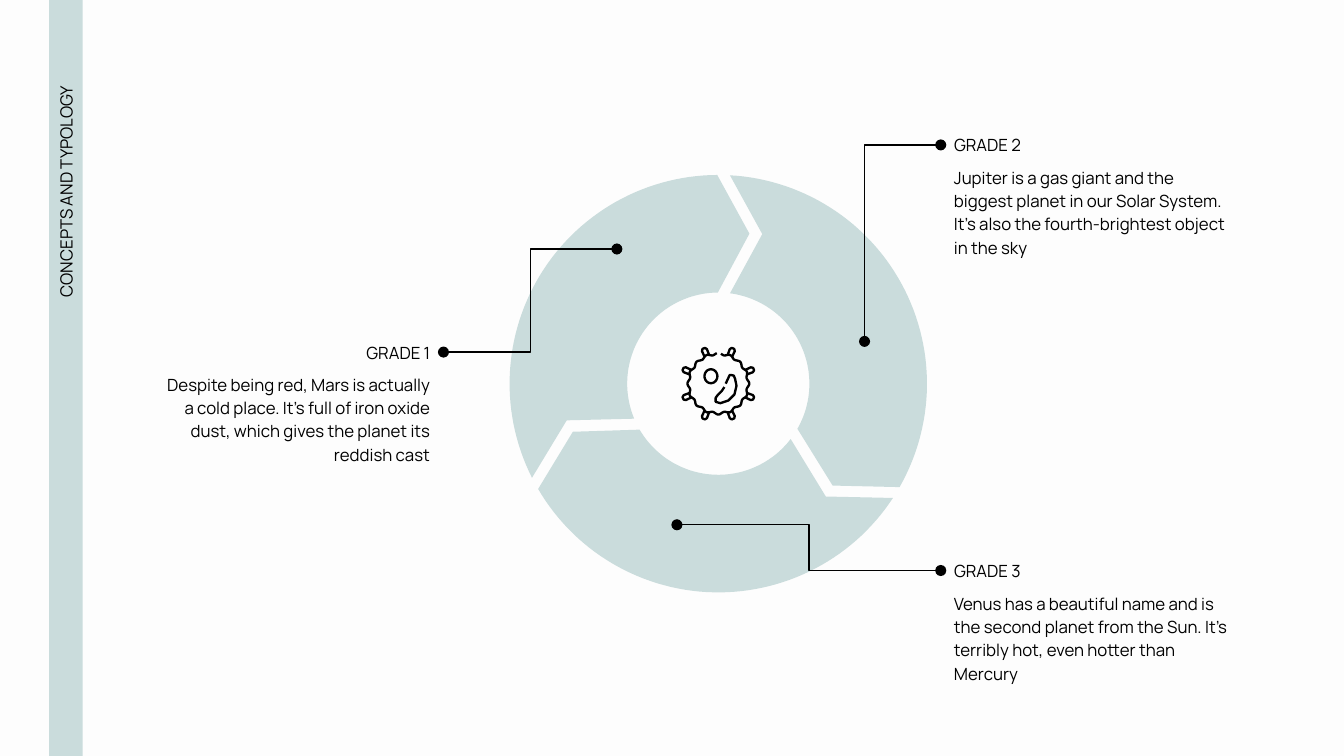
"""Build a slide with a three-part cycle, callouts and a vertical title."""
from dataclasses import dataclass
from math import cos, hypot, atan2, degrees, radians, sin

from lxml import etree
from pptx import Presentation
from pptx import util as u
from pptx.dml.color import RGBColor
from pptx.enum import shapes, text
from pptx.oxml.ns import qn

Point = tuple[float, float]

MIST = RGBColor(0xCA, 0xDC, 0xDC)
BLACK = RGBColor(0, 0, 0)
PAPER = RGBColor(0xFD, 0xFD, 0xFD)
FONT = "Manrope"
WIDTH = u.Inches(10)
HEIGHT = WIDTH * 9 // 16
COLUMNS = 100
CELL = WIDTH // COLUMNS
CENTRE = (53.45, 28.55)
OUTER, INNER = 15.53, 6.78
LEFT, RIGHT = text.PP_ALIGN.LEFT, text.PP_ALIGN.RIGHT


@dataclass(frozen=True)
class Block:
    """A block of text on the grid."""
    words: str
    col: float
    row: float
    cols: float
    rows: float
    align: text.PP_ALIGN = LEFT
    spacing: float = 1.0


@dataclass(frozen=True)
class Leader:
    """An elbow line between two grid points, with one or two corners."""
    start: Point
    end: Point
    single_corner: bool = False


TITLE = Block("CONCEPTS AND TYPOLOGY", -18.65, 27.8, 47.1, 2.3, RIGHT)
BLOCKS = [
    Block("GRADE 1", 11.1, 24.5, 21.9, 3.5, RIGHT),
    Block("Despite being red, Mars is actually a cold place. It’s full of iron oxide dust, "
          "which gives the planet its reddish cast", 10.67, 26.65, 22.3, 5.1, RIGHT, 1.15),
    Block("GRADE 2", 70, 9, 21.9, 3.5),
    Block("Jupiter is a gas giant and the biggest planet in our Solar System. It’s also "
          "the fourth-brightest object in the sky", 70, 11.25, 22.3, 5.1, LEFT, 1.15),
    Block("GRADE 3", 70, 40.7, 21.9, 3.5),
    Block("Venus has a beautiful name and is the second planet from the Sun. It’s "
          "terribly hot, even hotter than Mercury", 70, 42.95, 22.3, 5.1, LEFT, 1.15),
]
LEADERS = [
    Leader((45.9, 18.53), (33, 26.2)),
    Leader((64.33, 25.4), (70, 10.78), single_corner=True),
    Leader((50.37, 39.05), (70, 42.45)),
]
CRESCENT = [(54, 28.55), (54.25, 28), (54.3, 27.9), (54.4, 27.9), (54.6, 27.95),
            (54.7, 28.2), (54.8, 28.7), (54.65, 29.35), (54.2, 29.8), (53.6, 30),
            (53.25, 29.9), (53.25, 29.6), (53.4, 29.4), (53.7, 29.1), (53.9, 28.8)]


def cells(*counts: float) -> list[int]:
    """Turn grid counts into lengths."""
    return [round(n * CELL) for n in counts]


def polar(radius: float, angle: float) -> Point:
    """Place a point around the centre, clockwise from the top."""
    a = radians(angle)
    return CENTRE[0] + radius * sin(a), CENTRE[1] - radius * cos(a)


def arc(radius: float, first: float, last: float, steps: int = 60) -> list[Point]:
    """Sample an arc around the centre."""
    return [polar(radius, first + (last - first) * i / steps) for i in range(steps + 1)]


def outline(parent, points: list[Point], closed: bool = True):
    """Draw a freeform through grid points."""
    corners = [tuple(cells(*pt)) for pt in points]
    builder = parent.build_freeform(*corners[0], scale=1.0)
    builder.add_line_segments(corners[1:], close=closed)
    sp = builder.convert_to_shape()
    sp.shadow.inherit = False
    return sp


def paint(sp) -> None:
    """Fill a shape with the accent colour and drop its line."""
    sp.fill.solid()
    sp.fill.fore_color.rgb = MIST
    sp.line.fill.background()


def stroke(parent, points: list[Point], closed: bool = False) -> None:
    """Draw one unfilled black line of the icon."""
    sp = outline(parent, points, closed)
    sp.fill.background()
    sp.line.color.rgb = BLACK
    sp.line.width = u.Pt(1.25)
    etree.SubElement(sp.line._get_or_add_ln(), qn("a:round"))


def draw_cycle(parent) -> None:
    """Draw three equal chevron-ended ring segments."""
    for turn in (0, 120, 240):
        paint(outline(parent, [
            *arc(OUTER, turn + 3.2, turn + 119.7),
            polar(11.4, turn + 131.7),
            *arc(INNER, turn + 119.7, turn + 7.4),
            polar(11.6, turn + 16.4),
        ]))


def draw_microbe(parent) -> None:
    """Draw a wavy cell with eight knobs, a nucleus and a crescent."""
    stroke(parent, [polar(2.22 + 0.08 * cos(radians(16 * a)), a) for a in range(5, 358, 2)])
    knob = [(2.25, -0.18), (2.7, -0.2), (2.84, -0.1), (2.84, 0.1), (2.7, 0.2), (2.25, 0.18)]
    for k in range(8):
        stroke(parent, [polar(hypot(r, t), 22.5 + 45 * k + degrees(atan2(t, r)))
                        for r, t in knob])
    stroke(parent, [(52.9 + 0.48 * cos(radians(a)), 28 + 0.52 * sin(radians(a)))
                    for a in range(0, 360, 15)], closed=True)
    stroke(parent, CRESCENT)


def write(sp, block: Block, anchor=text.MSO_ANCHOR.TOP) -> None:
    """Put a block's words in a shape and format them."""
    sp.left, sp.top, sp.width, sp.height = cells(block.col, block.row, block.cols, block.rows)
    tf = sp.text_frame
    tf.text = block.words
    tf.word_wrap = True
    tf.auto_size = text.MSO_AUTO_SIZE.NONE
    tf.vertical_anchor = anchor
    tf.margin_left = tf.margin_right = tf.margin_top = tf.margin_bottom = CELL
    p = tf.paragraphs[0]
    p.alignment, p.line_spacing = block.align, block.spacing
    for r in p.runs:
        r.font.name, r.font.size, r.font.color.rgb = FONT, u.Pt(9), BLACK


def draw_leader(parent, leader: Leader) -> None:
    """Draw an elbow connector with a dot at each end."""
    (x1, y1), (x2, y2) = leader.start, leader.end
    if leader.single_corner:
        mid_x, mid_y = (x1 + x2) / 2, (y1 + y2) / 2
        half_w, half_h = abs(y2 - y1) / 2, abs(x2 - x1) / 2
        x1, y1, x2, y2 = mid_x - half_w, mid_y - half_h, mid_x + half_w, mid_y + half_h
    cxn = parent.add_connector(shapes.MSO_CONNECTOR.ELBOW, *cells(x1, y1, x2, y2))
    cxn.line.color.rgb = BLACK
    cxn.line.width = u.Pt(0.75)
    ln = cxn.line._get_or_add_ln()
    for end in ("a:headEnd", "a:tailEnd"):
        etree.SubElement(ln, qn(end), type="oval")
    props = cxn._element.spPr
    etree.SubElement(props, qn("a:effectLst"))
    if leader.single_corner:
        props.find(qn("a:xfrm")).set("rot", "16200000")
        props.find(qn("a:prstGeom")).set("prst", "bentConnector2")


def main() -> None:
    """Build and save the slide."""
    prs = Presentation()
    prs.slide_width, prs.slide_height = WIDTH, HEIGHT
    s = prs.slides.add_slide(prs.slide_layouts[5])
    s.background.fill.solid()
    s.background.fill.fore_color.rgb = PAPER

    rail_left, rail_width = cells(3.65, 2.5)
    rail = s.shapes.add_shape(shapes.MSO_SHAPE.RECTANGLE, rail_left, 0, rail_width, HEIGHT)
    rail.shadow.inherit = False
    paint(rail)
    s.shapes.title._element.addprevious(rail._element)

    write(s.shapes.title, TITLE, text.MSO_ANCHOR.MIDDLE)
    s.shapes.title.rotation = 270
    for block in BLOCKS:
        write(s.shapes.add_textbox(0, 0, CELL, CELL), block)
    draw_cycle(s.shapes.add_group_shape().shapes)
    for leader in LEADERS:
        draw_leader(s.shapes, leader)
    draw_microbe(s.shapes.add_group_shape().shapes)
    prs.save("out.pptx")


if __name__ == "__main__":
    main()
